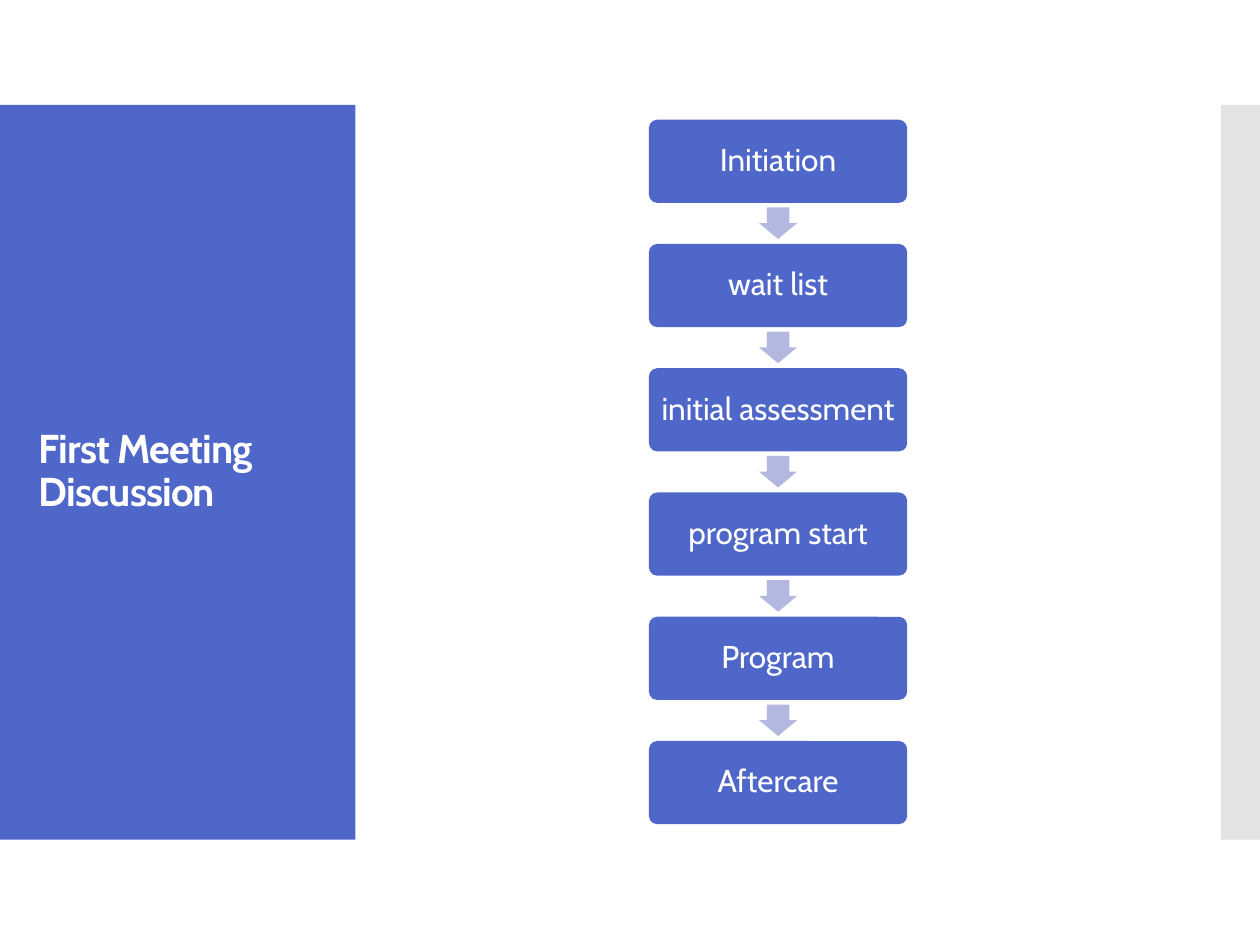
import pptx
import pptx.util
import pptx.dml.color
import pptx.enum.shapes
import pptx.enum.text
import lxml.etree

presentation = pptx.Presentation()
presentation.slide_width = pptx.util.Inches(10)
presentation.slide_height = pptx.util.Inches(7.5)
slide = presentation.slides.add_slide(presentation.slide_layouts[6])
presets = pptx.enum.shapes.MSO_SHAPE
alignments = pptx.enum.text.PP_ALIGN

BLUE, LAVENDER, GREY, WHITE = "4E67C8", "B2B8E0", "C8C8C8", "FFFFFF"
STEPS = ["Initiation", "wait list", "initial assessment", "program start", "Program", "Aftercare"]
STEP_TOP, STEP_PITCH = 12.67, 13.15


def add_block(preset, left, top, width, height, color, adjustments=()):
    shape = slide.shapes.add_shape(
        preset,
        int(presentation.slide_width * left / 100),
        int(presentation.slide_height * top / 100),
        int(presentation.slide_width * width / 100),
        int(presentation.slide_height * height / 100),
    )
    shape.shadow.inherit = False
    shape.line.fill.background()
    if color:
        shape.fill.solid()
        shape.fill.fore_color.rgb = pptx.dml.color.RGBColor.from_string(color)
    else:
        shape.fill.background()
    for index, value in enumerate(adjustments):
        shape.adjustments[index] = value
    return shape


def write_text(shape, text, alignment, frame_format, font_format):
    frame = shape.text_frame
    frame.word_wrap = True
    frame.vertical_anchor = pptx.enum.text.MSO_ANCHOR.MIDDLE
    for name, value in frame_format.items():
        setattr(frame, name, value)
    paragraph = frame.paragraphs[0]
    paragraph.alignment = alignment
    paragraph.line_spacing = 0.9
    run = paragraph.add_run()
    run.text = text
    run.font.color.rgb = pptx.dml.color.RGBColor.from_string(WHITE)
    for name, value in font_format.items():
        setattr(run.font, name, value)
    return run


add_block(presets.RECTANGLE, 0, 11.1, 28.2, 77.75, BLUE)
side_band = add_block(presets.RECTANGLE, 96.9, 11.1, 3.1, 77.75, GREY)
band_color = side_band.fill._xPr.solidFill[0]
lxml.etree.SubElement(band_color, pptx.oxml.ns.qn("a:alpha"), val="50000")

title = add_block(presets.RECTANGLE, 2.1, 16.4, 24.2, 67.07, None)
title_font = {"name": "Cabin", "size": pptx.util.Pt(23), "bold": True}
title_run = write_text(title, "First Meeting Discussion", alignments.LEFT, {}, title_font)
title_run.font._element.set("spc", "-50")

inset = pptx.util.Inches(0.07)
step_frame = {f"margin_{side}": inset for side in ("left", "right", "top", "bottom")}
step_font = {"name": "Cabin", "size": pptx.util.Pt(18)}
for row, step in enumerate(STEPS):
    top = STEP_TOP + row * STEP_PITCH
    if row:
        arrow = add_block(presets.RIGHT_ARROW, 60.5, top - 4.2, 2.5, 4, LAVENDER, (0.6, 0.5))
        arrow.rotation = 90
    box = add_block(presets.ROUNDED_RECTANGLE, 51.5, top, 20.5, 8.8, BLUE, (0.1,))
    write_text(box, step, alignments.CENTER, step_frame, step_font)

presentation.save("out.pptx")
